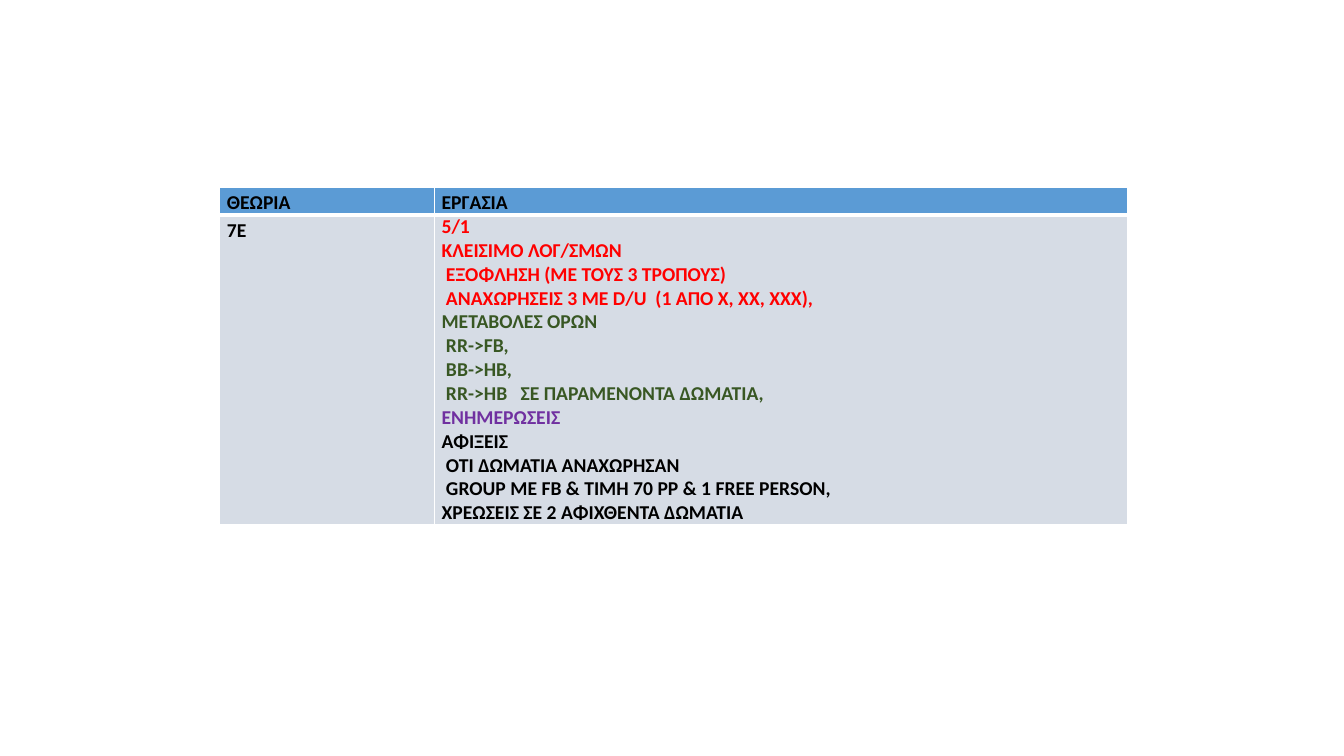
import pptx
import pptx.util
import pptx.dml.color
import pptx.enum.text
from lxml import etree
from pptx.util import Inches

COLORS = {
    "white": "FFFFFF",
    "black": "000000",
    "header": "5B9BD5",
    "body": "D6DCE5",
    "red": "FF0000",
    "green": "385723",
    "purple": "7030A0",
}

HEADERS = ["ΘΕΩΡΙΑ", "ΕΡΓΑΣΙΑ"]
THEORY = "7E"
TASKS = [
    ("red", [
        "5/1",
        "ΚΛΕΙΣΙΜΟ ΛΟΓ/ΣΜΩΝ",
        " ΕΞΟΦΛΗΣΗ (ΜΕ ΤΟΥΣ 3 ΤΡΟΠΟΥΣ)",
        " ΑΝΑΧΩΡΗΣΕΙΣ 3 ΜΕ D/U  (1 ΑΠΟ Χ, ΧΧ, ΧΧΧ),",
    ]),
    ("green", [
        "ΜΕΤΑΒΟΛΕΣ ΟΡΩΝ",
        " RR->FB,",
        " ΒB->ΗB,",
        " RR->HB   ΣΕ ΠΑΡΑΜΕΝΟΝΤΑ ΔΩΜΑΤΙΑ,",
    ]),
    ("purple", ["ΕΝΗΜΕΡΩΣΕΙΣ"]),
    ("black", [
        "ΑΦΙΞΕΙΣ",
        " ΟΤΙ ΔΩΜΑΤΙΑ ΑΝΑΧΩΡΗΣΑΝ",
        " GROUP ME FB & ΤΙΜΗ 70 PP & 1 FREE PERSON,",
        "ΧΡΕΩΣΕΙΣ ΣΕ 2 ΑΦΙΧΘΕΝΤΑ ΔΩΜΑΤΙΑ",
    ]),
]


class SlideBuilder:
    FONT = {"name": "Calibri", "size": pptx.util.Pt(14), "bold": True}
    MARGINS = {
        "margin_left": Inches(0.07), "margin_right": Inches(0.07),
        "margin_top": 0, "margin_bottom": 0,
    }
    LABEL = {
        "alignment": pptx.enum.text.PP_ALIGN.JUSTIFY,
        "line_spacing": 1.15,
    }

    def __init__(self, s):
        self.s = s

    @staticmethod
    def apply(target, values):
        for name, value in values.items():
            setattr(target, name, value)

    @staticmethod
    def rgb(color):
        return pptx.dml.color.RGBColor.from_string(COLORS[color])

    def table(self, left, top, widths, heights):
        frame = self.s.shapes.add_table(
            len(heights), len(widths), Inches(left), Inches(top),
            Inches(sum(widths)), Inches(sum(heights)))
        table = frame.table
        for column, width in zip(table.columns, widths):
            column.width = Inches(width)
        for row, height in zip(table.rows, heights):
            row.height = Inches(height)
        return table

    def borders(self, cell, bottom):
        ns = pptx.oxml.ns.qn
        tc_pr = cell._tc.get_or_add_tcPr()
        widths = {"a:lnL": 1, "a:lnR": 1, "a:lnT": 1, "a:lnB": bottom}
        for i, (tag, width) in enumerate(widths.items()):
            line = etree.Element(ns(tag), w=str(pptx.util.Pt(width)))
            fill = etree.SubElement(line, ns("a:solidFill"))
            etree.SubElement(fill, ns("a:srgbClr"), val=COLORS["white"])
            tc_pr.insert(i, line)

    def cell(self, cell, lines, fill, bottom=1, paragraph=None):
        self.apply(cell, self.MARGINS)
        cell.fill.solid()
        cell.fill.fore_color.rgb = self.rgb(fill)
        self.borders(cell, bottom)
        tf = cell.text_frame
        for i, (text, color) in enumerate(lines):
            p = tf.add_paragraph() if i else tf.paragraphs[0]
            self.apply(p, paragraph or {})
            r = p.add_run()
            r.text = text
            self.apply(r.font, self.FONT)
            r.font.color.rgb = self.rgb(color)


def main():
    prs = pptx.Presentation()
    prs.slide_width, prs.slide_height = Inches(13.33), Inches(7.5)
    builder = SlideBuilder(prs.slides.add_slide(prs.slide_layouts[6]))

    # Table grid
    table = builder.table(2.18, 1.86, [2.13, 6.87], [0.27, 3.07])

    # Header row
    for column, title in enumerate(HEADERS):
        builder.cell(table.cell(0, column), [(title, "black")], "header",
                     bottom=3, paragraph=builder.LABEL)

    # Theory and its tasks
    builder.cell(table.cell(1, 0), [(THEORY, "black")], "body",
                 paragraph=builder.LABEL)
    tasks = [(text, color) for color, texts in TASKS for text in texts]
    builder.cell(table.cell(1, 1), tasks, "body")

    prs.save("out.pptx")


if __name__ == "__main__":
    main()
